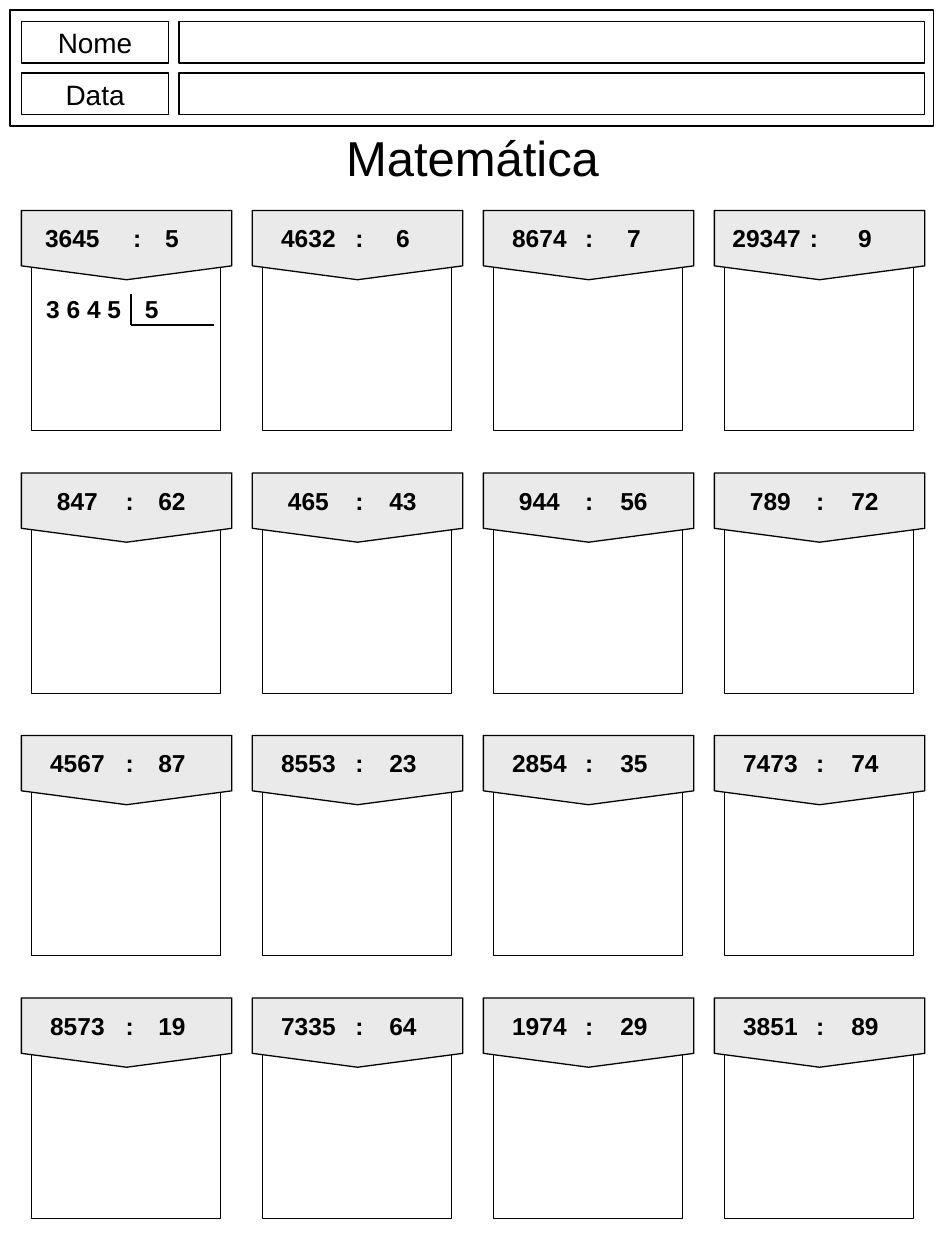
from lxml import etree
from pptx import Presentation
from pptx.dml.color import RGBColor
from pptx.enum.shapes import MSO_CONNECTOR, MSO_SHAPE
from pptx.enum.text import MSO_ANCHOR, MSO_AUTO_SIZE, PP_ALIGN
from pptx.oxml.ns import qn
from pptx.util import Inches, Pt

RECTANGLE = MSO_SHAPE.RECTANGLE
BANNER = MSO_SHAPE.FLOWCHART_OFFPAGE_CONNECTOR
STRAIGHT = MSO_CONNECTOR.STRAIGHT
MIDDLE = MSO_ANCHOR.MIDDLE
CENTER = PP_ALIGN.CENTER
NO_AUTOFIT = MSO_AUTO_SIZE.NONE

COLORS = {"ink": "000000", "paper": "FFFFFF", "banner": "EAEAEA"}
INK = RGBColor.from_string(COLORS["ink"])
LINE_WIDTH = Pt(0.75)

LABEL = {"name": "Arial", "size": Pt(16), "bold": False}
HEADING = {"name": "Arial", "size": Pt(28), "bold": False}
NUMBER = {"name": "Arial", "size": Pt(14), "bold": True}

deck = Presentation()
deck.slide_width = Inches(7.5)
deck.slide_height = Inches(10)
page = deck.slides.add_slide(deck.slide_layouts[5])


def add_panel(kind, left, top, width, height, fill=None):
    """Add an outlined shape, see-through unless a fill is named."""
    panel = page.shapes.add_shape(
        kind, Inches(left), Inches(top), Inches(width), Inches(height))
    panel.shadow.inherit = False
    panel.line.color.rgb = INK
    panel.line.width = LINE_WIDTH
    if fill:
        panel.fill.solid()
        panel.fill.fore_color.rgb = RGBColor.from_string(COLORS[fill])
    else:
        panel.fill.background()
    return panel


def write(box, text, style):
    """Put one centred, unwrapped line of text in a box."""
    frame = box.text_frame
    frame.auto_size = NO_AUTOFIT
    frame.word_wrap = False
    frame.vertical_anchor = MIDDLE
    para = frame.paragraphs[0]
    para.alignment = CENTER
    span = para.add_run()
    span.text = text
    span.font.color.rgb = INK
    for name, value in style.items():
        setattr(span.font, name, value)


# Header with the fields to fill in
add_panel(RECTANGLE, 0.08, 0.08, 7.33, 0.92)
for label, top in (("Nome", 0.17), ("Data", 0.58)):
    write(add_panel(RECTANGLE, 0.17, top, 1.17, 0.33), label, LABEL)
    add_panel(RECTANGLE, 1.42, top, 5.92, 0.33)

# The title is wide enough to stay on one line
title = page.shapes.title
title.left, title.top = Inches(2.5), Inches(1.08)
title.width, title.height = Inches(2.5), Inches(0.33)
write(title, "Matemática", HEADING)

# Grid of division exercises
exercises = [
    [("3645", "5"), ("4632", "6"), ("8674", "7"), ("29347", "9")],
    [("847", "62"), ("465", "43"), ("944", "56"), ("789", "72")],
    [("4567", "87"), ("8553", "23"), ("2854", "35"), ("7473", "74")],
    [("8573", "19"), ("7335", "64"), ("1974", "29"), ("3851", "89")],
]
COLUMN_STEP = 22 / 12
ROW_STEP = 25 / 12
COLON_CENTERS = [0.78, 0.77, 0.76, 0.76]
# Shifts of the dividend and the colon where they leave the grid
SHIFTS = {"3645": (-0.04, 0.06), "29347": (-0.03, -0.05)}

for row, row_exercises in enumerate(exercises):
    top = 1.67 + row * ROW_STEP
    for column, (dividend, divisor) in enumerate(row_exercises):
        left = 0.25 + column * COLUMN_STEP
        add_panel(RECTANGLE, left, top + 0.25, 1.5, 1.5, "paper")
        add_panel(BANNER, left - 0.08, top, 1.67, 0.55, "banner")
        dividend_shift, colon_shift = SHIFTS.get(dividend, (0, 0))
        parts = [
            (dividend, dividend_shift, 0.73),
            (":", COLON_CENTERS[column] - 0.25 + colon_shift, 0.5),
            (divisor, 0.75, 0.73),
        ]
        for text, offset, width in parts:
            box = page.shapes.add_textbox(
                Inches(left + offset), Inches(top), Inches(width), Inches(0.44))
            write(box, text, NUMBER)

# Worked layout in the first card
for text, left in (("3 6 4 5", 0.25), ("5", 0.79)):
    box = page.shapes.add_textbox(
        Inches(left), Inches(2.23), Inches(0.83), Inches(0.44))
    write(box, text, NUMBER)

corner = (1.04, 2.58)
for start, end in (((1.04, 2.33), corner), (corner, (1.7, 2.58))):
    bracket = page.shapes.add_connector(
        STRAIGHT, *(Inches(value) for value in start + end))
    bracket.line.color.rgb = INK
    bracket.line.width = LINE_WIDTH
    etree.SubElement(bracket._element.spPr, qn("a:effectLst"))

deck.save("out.pptx")
